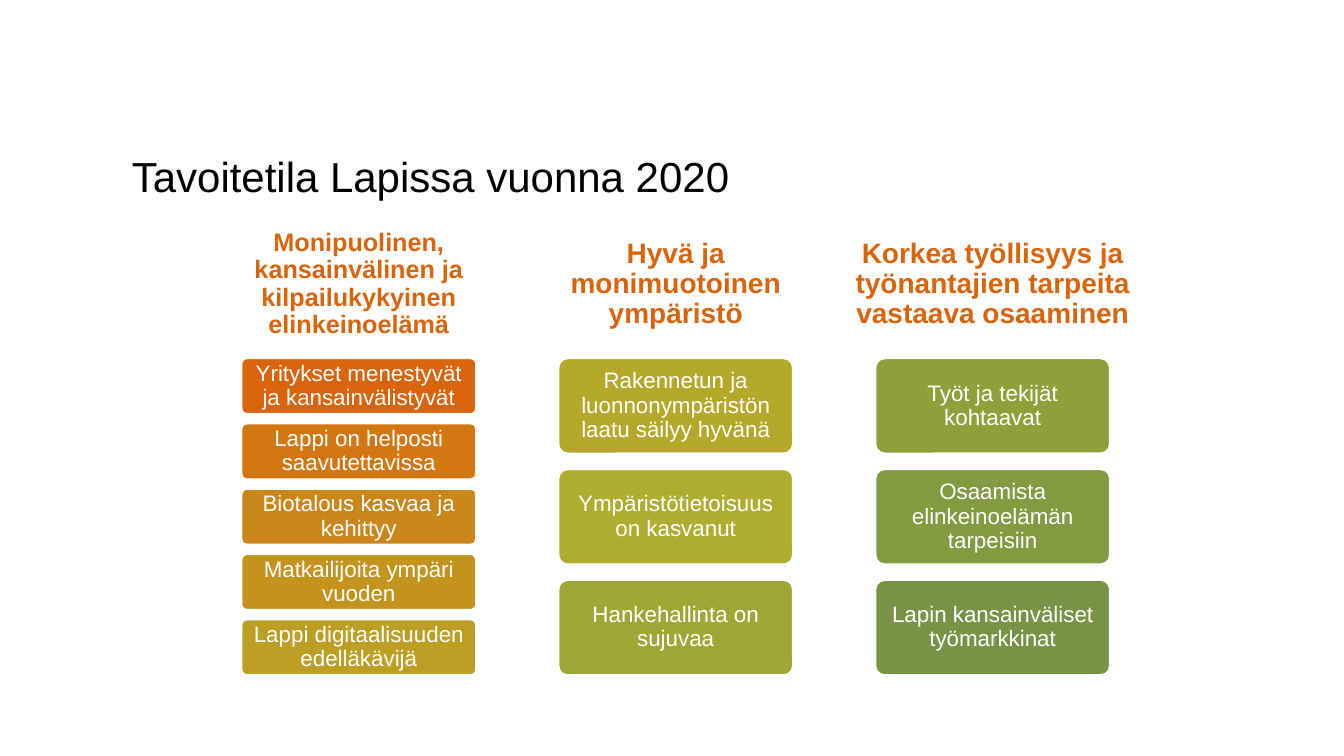
from pptx import Presentation
from pptx.dml.color import RGBColor
from pptx.enum.shapes import MSO_SHAPE as Shape
from pptx.enum.text import MSO_ANCHOR as Anchor, PP_ALIGN as Align
from pptx.util import Pt

ACCENT, WHITE, BLACK = "D9640C", "FFFFFF", "000000"
COLUMN_LEFT, COLUMN_PITCH, COLUMN_WIDTH = 151.2, 226.4, 210.2
HEADING_TOP, HEADING_HEIGHT = 150.5, 105.1
STACK_HEIGHT = 227
GAP_RATIO = 2 / 13  # gap between cards relative to card height
CARD_WIDTH_RATIO = 0.8

GOALS = [
    ("Monipuolinen, kansainvälinen ja kilpailukykyinen elinkeinoelämä", 18, [
        ("Yritykset menestyvät ja kansainvälistyvät", ACCENT),
        ("Lappi on helposti saavutettavissa", "D27612"),
        ("Biotalous kasvaa ja kehittyy", "CA8618"),
        ("Matkailijoita ympäri vuoden", "C3931E"),
        ("Lappi digitaalisuuden edelläkävijä", "BC9E24"),
    ]),
    ("Hyvä ja monimuotoinen ympäristö", 20, [
        ("Rakennetun ja luonnonympäristön laatu säilyy hyvänä", "B5A72A"),
        ("Ympäristötietoisuus on kasvanut", "AEAD30"),
        ("Hankehallinta on sujuvaa", "9EA735"),
    ]),
    ("Korkea työllisyys ja työnantajien tarpeita vastaava osaaminen", 20, [
        ("Työt ja tekijät kohtaavat", "8FA03B"),
        ("Osaamista elinkeinoelämän tarpeisiin", "829A40"),
        ("Lapin kansainväliset työmarkkinat", "779346"),
    ]),
]


def rgb(color):
    return RGBColor.from_string(color)


def write(frame, text, size, color, inset, bold=False, align=Align.CENTER, spacing=0.9):
    """Fill a text frame with one paragraph; inset is (horizontal, vertical)."""
    across, down = map(Pt, inset)
    frame_format = {
        "word_wrap": True, "vertical_anchor": Anchor.MIDDLE,
        "margin_left": across, "margin_right": across,
        "margin_top": down, "margin_bottom": down,
    }
    for name, value in frame_format.items():
        setattr(frame, name, value)
    paragraph = frame.paragraphs[0]
    paragraph.text = text
    paragraph.alignment = align
    paragraph.line_spacing = spacing
    font_format = {"name": "Arial", "size": Pt(size), "bold": bold}
    for name, value in font_format.items():
        setattr(paragraph.font, name, value)
    paragraph.font.color.rgb = rgb(color)


def add_title(slide, text, left, top, width, height):
    title = slide.shapes.add_textbox(*map(Pt, (left, top, width, height)))
    write(title.text_frame, text, 30, BLACK, (7.2, 3.6), align=Align.LEFT, spacing=1.0)


def add_card(slide, text, color, left, top, width, height):
    card = slide.shapes.add_shape(
        Shape.ROUNDED_RECTANGLE, *map(Pt, (left, top, width, height)))
    card.adjustments[0] = 0.1
    card.shadow.inherit = False
    card.fill.solid()
    card.fill.fore_color.rgb = rgb(color)
    card.line.color.rgb = rgb(WHITE)
    card.line.width = Pt(2)
    write(card.text_frame, text, 16, WHITE, (2.9, 2.2))


def add_card_stack(slide, cards, left, top, width, height):
    """Spread the cards evenly over the full height of the box."""
    count = len(cards)
    card_height = height / (count + (count - 1) * GAP_RATIO)
    pitch = card_height * (1 + GAP_RATIO)
    for row, (text, color) in enumerate(cards):
        add_card(slide, text, color, left, top + row * pitch, width, card_height)


def add_goal_column(slide, goal, left, top, width):
    heading_text, heading_size, cards = goal
    heading = slide.shapes.add_textbox(*map(Pt, (left, top, width, HEADING_HEIGHT)))
    write(heading.text_frame, heading_text, heading_size, ACCENT, (5.4, 5.4), bold=True)
    card_width = width * CARD_WIDTH_RATIO
    add_card_stack(slide, cards, left + (width - card_width) / 2,
                   top + HEADING_HEIGHT, card_width, STACK_HEIGHT)


def main():
    deck = Presentation()
    deck.slide_width, deck.slide_height = Pt(960), Pt(540)
    slide = deck.slides.add_slide(deck.slide_layouts[6])
    add_title(slide, "Tavoitetila Lapissa vuonna 2020", 87.1, 100, 816.5, 50.4)
    for column, goal in enumerate(GOALS):
        add_goal_column(slide, goal, COLUMN_LEFT + column * COLUMN_PITCH,
                        HEADING_TOP, COLUMN_WIDTH)
    deck.save("out.pptx")


if __name__ == "__main__":
    main()
